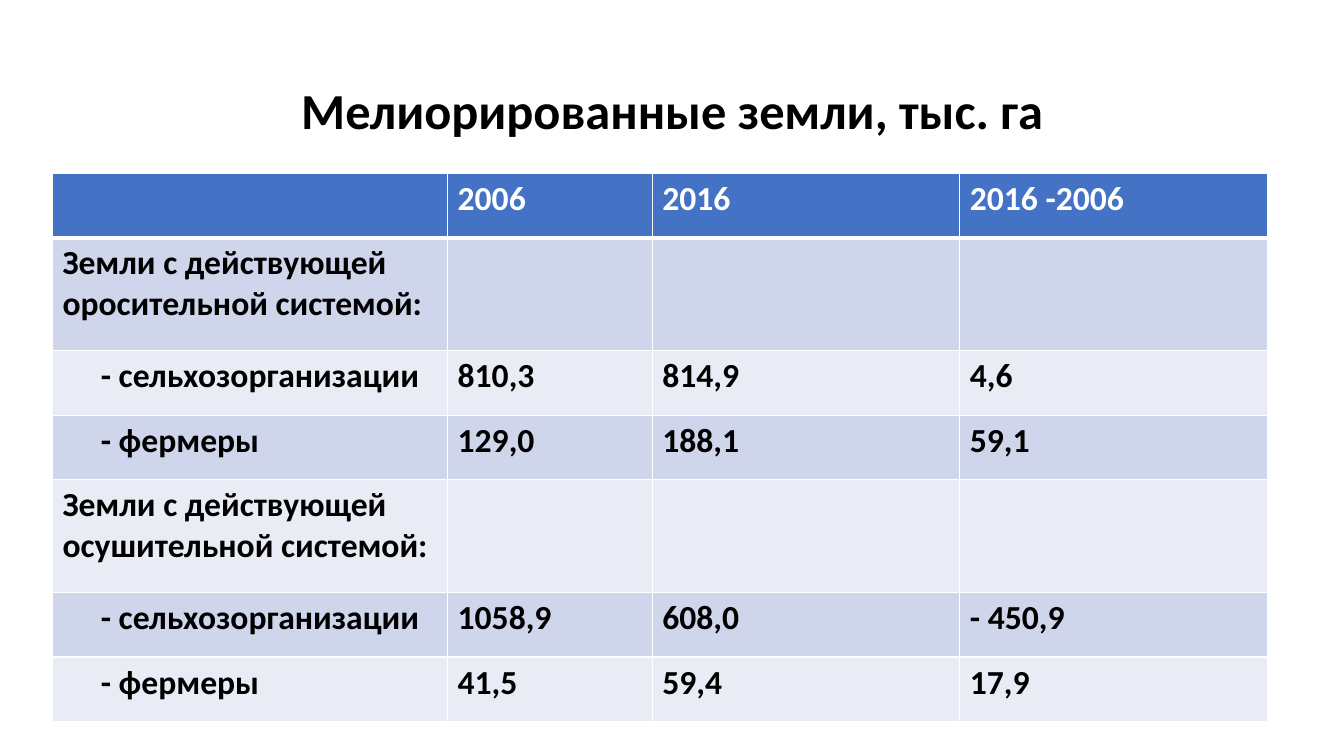
"""Build a slide with a table of reclaimed land areas."""
from dataclasses import dataclass

from lxml import etree
from pptx import Presentation
from pptx import util as u
from pptx.dml.color import RGBColor
from pptx.enum import text
from pptx.oxml.ns import qn


@dataclass(frozen=True)
class Theme:
    font: str = "Calibri"
    title_size: int = 36
    table_size: int = 24
    dark: str = "000000"
    light: str = "FFFFFF"
    header: str = "4472C4"
    bands: tuple = ("E9EBF5", "CFD5EA")
    thin: float = 1
    thick: float = 3


THEME = Theme()
COLUMNS = (3.92, 2.03, 3.05, 3.05)
ROW_HEIGHT, GROUP_HEIGHT = 0.64, 1.12
CELL_MARGIN, ITEM_MARGIN = 0.1, 0.48
ROWS = (
    ("", "2006", "2016", "2016 -2006"),
    ("Земли с действующей оросительной системой:", "", "", ""),
    ("- сельхозорганизации", "810,3", "814,9", "4,6"),
    ("- фермеры", "129,0", "188,1", "59,1"),
    ("Земли с действующей осушительной системой:", "", "", ""),
    ("- сельхозорганизации", "1058,9", "608,0", "- 450,9"),
    ("- фермеры", "41,5", "59,4", "17,9"),
)


def style_paragraph(para, size, color):
    para.font.name = THEME.font
    para.font.size = u.Pt(size)
    para.font.bold = True
    para.font.color.rgb = RGBColor.from_string(color)


def add_title(page, wording):
    box = page.shapes.add_textbox(u.Inches(0.92), u.Inches(0.4), u.Inches(11.5), u.Inches(1.45))
    frame = box.text_frame
    frame.word_wrap = True
    frame.vertical_anchor = text.MSO_ANCHOR.MIDDLE
    para = frame.paragraphs[0]
    para.text = wording
    para.alignment = text.PP_ALIGN.CENTER
    para.line_spacing = 0.9
    style_paragraph(para, THEME.title_size, THEME.dark)


def set_borders(cell, top, bottom):
    properties = cell._tc.get_or_add_tcPr()
    widths = {"a:lnL": THEME.thin, "a:lnR": THEME.thin, "a:lnT": top, "a:lnB": bottom}
    for tag, width in widths.items():
        line = etree.SubElement(properties, qn(tag), w=str(u.Pt(width)))
        fill = etree.SubElement(line, qn("a:solidFill"))
        etree.SubElement(fill, qn("a:srgbClr"), val=THEME.light)


def fill_cell(cell, wording, row):
    header = row == 0
    set_borders(cell, THEME.thick if row == 1 else THEME.thin, THEME.thick if header else THEME.thin)
    cell.fill.solid()
    cell.fill.fore_color.rgb = RGBColor.from_string(THEME.header if header else THEME.bands[row % 2])
    if wording:
        para = cell.text_frame.paragraphs[0]
        para.text = wording
        style_paragraph(para, THEME.table_size, THEME.light if header else THEME.dark)


def add_land_table(page):
    heights = [GROUP_HEIGHT if label.endswith(":") else ROW_HEIGHT for label, *_ in ROWS]
    table = page.shapes.add_table(
        len(ROWS), len(COLUMNS), u.Inches(0.52), u.Inches(1.72),
        u.Inches(sum(COLUMNS)), u.Inches(sum(heights)),
    ).table
    for column, width in zip(table.columns, COLUMNS):
        column.width = u.Inches(width)
    for row, (values, height) in enumerate(zip(ROWS, heights)):
        table.rows[row].height = u.Inches(height)
        for column, wording in enumerate(values):
            fill_cell(table.cell(row, column), wording, row)
        is_item = values[0].startswith("-")
        table.cell(row, 0).margin_left = u.Inches(ITEM_MARGIN if is_item else CELL_MARGIN)


def main():
    deck = Presentation()
    deck.slide_width, deck.slide_height = u.Inches(13.33), u.Inches(7.5)
    page = deck.slides.add_slide(deck.slide_layouts[6])
    add_title(page, "Мелиорированные земли, тыс. га")
    add_land_table(page)
    deck.save("out.pptx")


if __name__ == "__main__":
    main()
